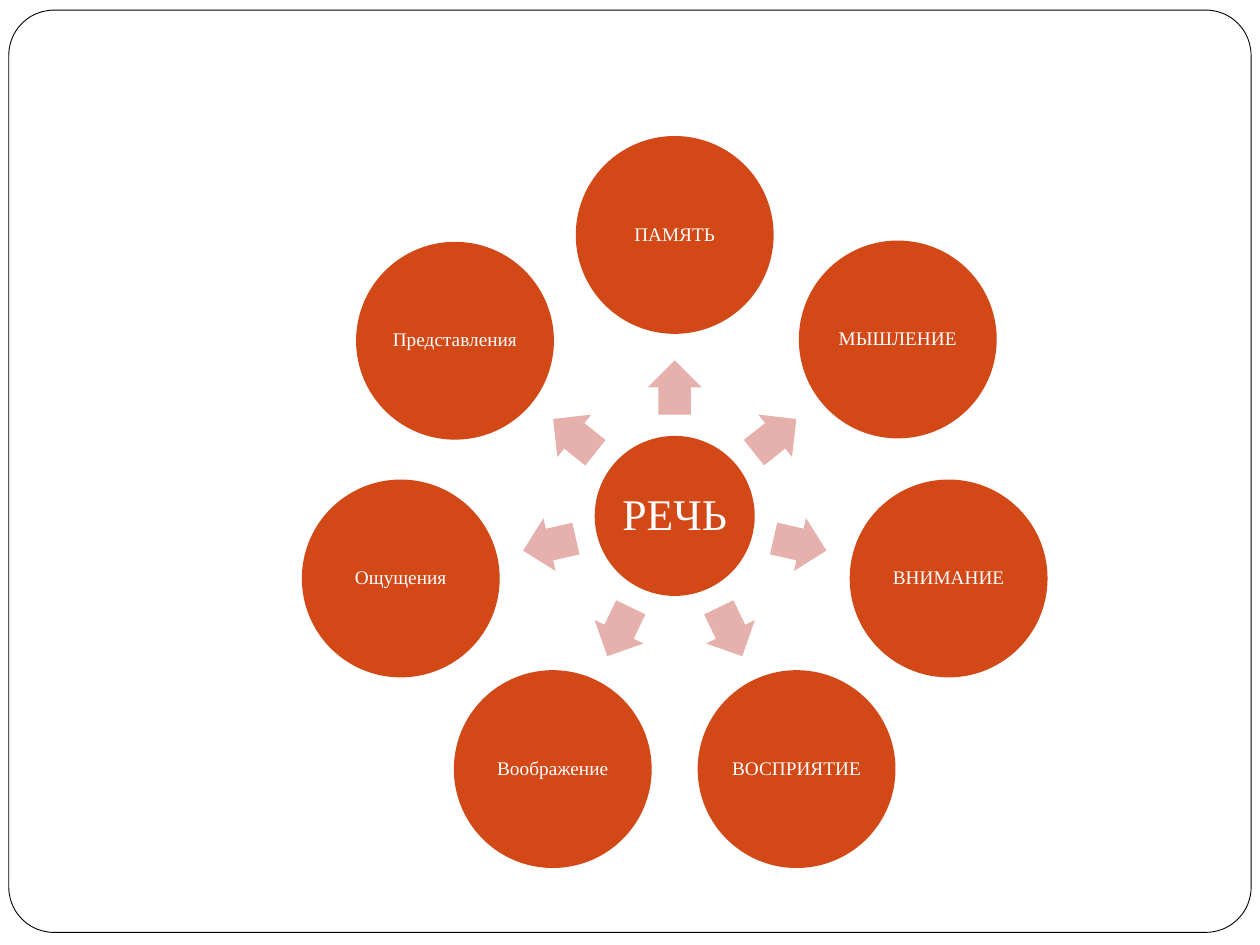
from math import cos, radians, sin

from pptx import Presentation
from pptx.dml.color import RGBColor
from pptx.enum.shapes import MSO_SHAPE
from pptx.enum.text import MSO_ANCHOR, PP_ALIGN
from pptx.util import Inches, Pt

ELLIPSE = MSO_SHAPE.OVAL
ARROW = MSO_SHAPE.RIGHT_ARROW
FRAME = MSO_SHAPE.ROUNDED_RECTANGLE
CENTER = PP_ALIGN.CENTER
MIDDLE = MSO_ANCHOR.MIDDLE

COLORS = {"circle": "D34817", "arrow": "E6B1AC", "white": "FFFFFF", "frame": "000000"}
FONT = "Times New Roman"
COLUMNS, ROWS = 100, 75

HUB = (53.55, 40.95)
HUB_SIZE, CIRCLE_SIZE, ARROW_SIZE = 12.7, 15.7, 4.3
CIRCLE_ORBIT, ARROW_ORBIT = 22.3, 10.2
PROCESSES = [
    "ПАМЯТЬ",
    "МЫШЛЕНИЕ",
    "ВНИМАНИЕ",
    "ВОСПРИЯТИЕ",
    "Воображение",
    "Ощущения",
    "Представления",
]
NUDGES = {"МЫШЛЕНИЕ": (0.27, -0.1)}


class RadialSlide:
    def __init__(self, presentation):
        self.slide = presentation.slides.add_slide(presentation.slide_layouts[6])
        self.column = presentation.slide_width / COLUMNS
        self.row = presentation.slide_height / ROWS

    def add_shape(self, kind, left, top, width, height, color):
        shape = self.slide.shapes.add_shape(
            kind,
            round(left * self.column),
            round(top * self.row),
            round(width * self.column),
            round(height * self.row),
        )
        shape.shadow.inherit = False
        shape.fill.solid()
        shape.fill.fore_color.rgb = RGBColor.from_string(COLORS[color])
        shape.line.fill.background()
        return shape

    def add_centered(self, kind, center, size, color):
        x, y = center
        return self.add_shape(kind, x - size / 2, y - size / 2, size, size, color)

    def add_frame(self, left, top, width, height):
        shape = self.add_shape(FRAME, left, top, width, height, "white")
        shape.adjustments[0] = 0.049
        shape.line.color.rgb = RGBColor.from_string(COLORS["frame"])
        shape.line.width = Pt(0.5)

    def add_circle(self, center, size, text, font_size, inset):
        shape = self.add_centered(ELLIPSE, center, size, "circle")
        frame = shape.text_frame
        frame.word_wrap = False
        frame.vertical_anchor = MIDDLE
        frame.margin_left = frame.margin_right = Inches(inset)
        frame.margin_top = frame.margin_bottom = Inches(inset)
        paragraph = frame.paragraphs[0]
        paragraph.text = text
        paragraph.alignment = CENTER
        paragraph.line_spacing = 0.9
        paragraph.font.name = FONT
        paragraph.font.size = Pt(font_size)
        paragraph.font.color.rgb = RGBColor.from_string(COLORS["white"])

    def add_arrow(self, center, angle):
        shape = self.add_centered(ARROW, center, ARROW_SIZE, "arrow")
        shape.adjustments[0] = 0.6
        shape.adjustments[1] = 0.5
        shape.rotation = angle % 360


def orbit_point(angle, radius):
    x, y = HUB
    return x + radius * cos(radians(angle)), y + radius * sin(radians(angle))


def main():
    presentation = Presentation()
    presentation.slide_width = Inches(10)
    presentation.slide_height = Inches(7.5)
    radial = RadialSlide(presentation)
    radial.add_frame(0.7, 0.8, 98.6, 73.2)
    radial.add_circle(HUB, HUB_SIZE, "РЕЧЬ", 25, 0.03)
    for index, process in enumerate(PROCESSES):
        angle = -90 + index * 360 / len(PROCESSES)
        x, y = orbit_point(angle, CIRCLE_ORBIT)
        shift_x, shift_y = NUDGES.get(process, (0, 0))
        radial.add_arrow(orbit_point(angle, ARROW_ORBIT), angle)
        radial.add_circle((x + shift_x, y + shift_y), CIRCLE_SIZE, process, 11, 0.02)
    presentation.save("out.pptx")


if __name__ == "__main__":
    main()
